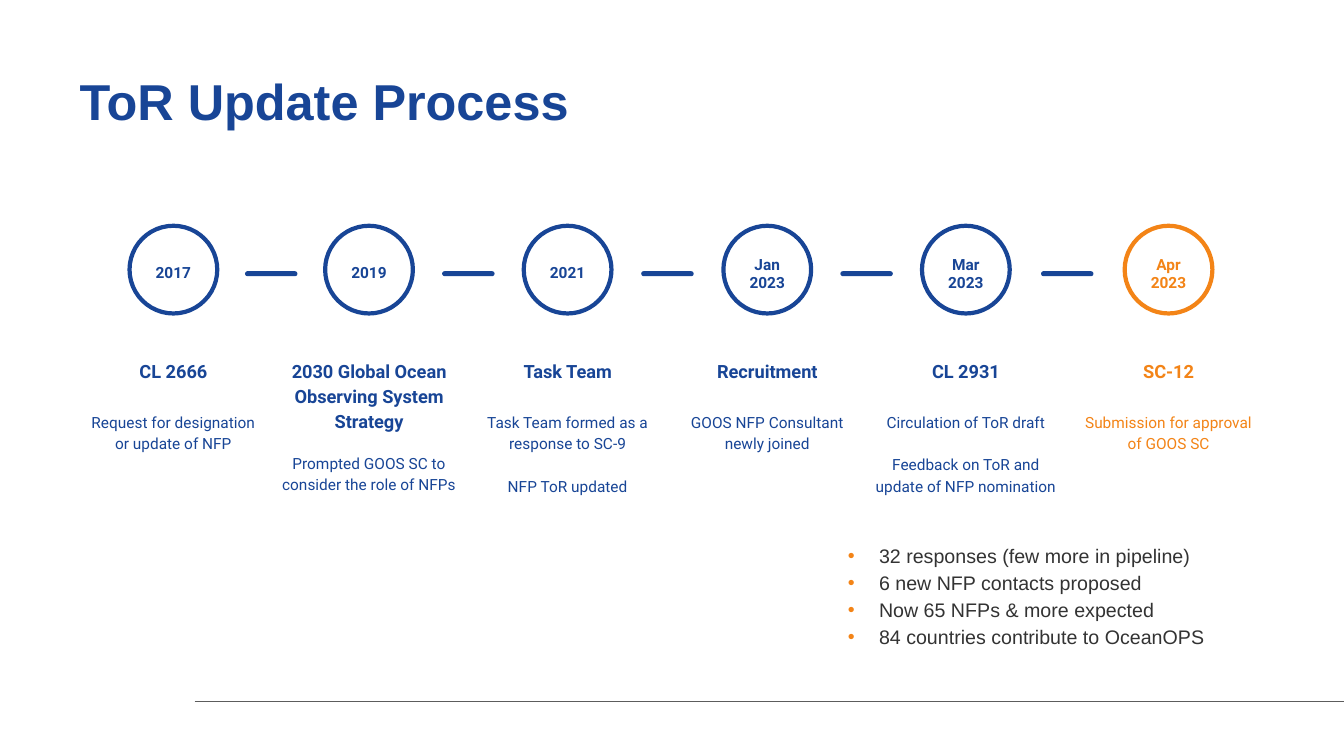
from dataclasses import dataclass

from lxml import etree
from pptx import Presentation
from pptx import util as u
from pptx.dml.color import RGBColor
from pptx.enum import shapes, text
from pptx.oxml import ns

WIDTH, HEIGHT = 13.33, 7.5
BLUE, ORANGE, GREY, RULE = "184596", "F38417", "333333", "5C5C5C"

# Timeline rows
CIRCLE_TOP, CIRCLE_SIZE = 2.24, 0.87
BAR_TOP, BAR_WIDTH, BAR_HEIGHT = 2.69, 0.52, 0.05
HEADING_TOP, HEADING_HEIGHT = 3.27, 0.65
DETAIL_TOP, DETAIL_HEIGHT = 3.94, 1.08
BLANK_LINE = 15.2


@dataclass
class Milestone:
    centre: float
    date: list
    heading: str
    details: list
    heading_width: float = 1.91
    detail_width: float = 1.91
    heading_drop: float = 0
    detail_drop: float = 0
    color: str = BLUE


MILESTONES = [
    Milestone(1.72, ["2017"], "CL 2666",
              ["Request for designation or update of NFP"]),
    Milestone(3.66, ["2019"], "2030 Global Ocean Observing System Strategy",
              ["Prompted GOOS SC to consider the role of NFPs"],
              detail_width=2.12, heading_drop=0.5, detail_drop=0.41),
    Milestone(5.63, ["2021"], "Task Team",
              ["Task Team formed as a response to SC-9", "NFP ToR updated"],
              1.98, 1.98),
    Milestone(7.61, ["Jan", "2023"], "Recruitment",
              ["GOOS NFP Consultant newly joined"]),
    Milestone(9.58, ["Mar", "2023"], "CL 2931",
              ["Circulation of ToR draft",
               "Feedback on ToR and update of NFP nomination"], 1.98, 2.18),
    Milestone(11.59, ["Apr", "2023"], "SC-12",
              ["Submission for approval of GOOS SC"], 1.98, 1.98, color=ORANGE),
]

RESULTS = [
    "32 responses (few more in pipeline)",
    "6 new NFP contacts proposed",
    "Now 65 NFPs & more expected",
    "84 countries contribute to OceanOPS",
]


def rgb(color):
    return RGBColor.from_string(color)


def add_span(para, words, size, color, font="Roboto", bold=False):
    span = para.add_run()
    span.text = words
    span.font.name = font
    span.font.size = u.Pt(size)
    span.font.bold = bold
    span.font.color.rgb = rgb(color)


def set_frame(frame, inset_x, inset_y, anchor=text.MSO_ANCHOR.TOP):
    frame.word_wrap = True
    frame.vertical_anchor = anchor
    frame.margin_left = frame.margin_right = u.Inches(inset_x)
    frame.margin_top = frame.margin_bottom = u.Inches(inset_y)


def next_para(frame, index):
    return frame.add_paragraph() if index else frame.paragraphs[0]


def add_box(page, left, top, width, height):
    return page.shapes.add_textbox(*map(u.Inches, (left, top, width, height)))


def add_centred_text(page, centre, top, width, height, lines, size, color,
                     bold=False, spacing=1.15, gap=0, anchor=text.MSO_ANCHOR.TOP):
    box = add_box(page, centre - width / 2, top, width, height)
    set_frame(box.text_frame, 0.13, 0.13, anchor)
    for index, line in enumerate(lines):
        para = next_para(box.text_frame, index)
        para.alignment = text.PP_ALIGN.CENTER
        para.line_spacing = spacing
        if index and gap:
            para.space_before = u.Pt(gap)
        add_span(para, line, size, color, bold=bold)


def add_plain_shape(page, kind, left, top, width, height):
    shape = page.shapes.add_shape(kind, *map(u.Inches, (left, top, width, height)))
    shape.shadow.inherit = False
    return shape


def add_circle(page, centre, color):
    circle = add_plain_shape(page, shapes.MSO_SHAPE.OVAL, centre - CIRCLE_SIZE / 2,
                             CIRCLE_TOP, CIRCLE_SIZE, CIRCLE_SIZE)
    circle.fill.background()
    circle.line.color.rgb = rgb(color)
    circle.line.width = u.Pt(3)


def add_bar(page, centre):
    bar = add_plain_shape(page, shapes.MSO_SHAPE.ROUNDED_RECTANGLE,
                          centre - BAR_WIDTH / 2, BAR_TOP, BAR_WIDTH, BAR_HEIGHT)
    bar.adjustments[0] = 0.5
    bar.fill.solid()
    bar.fill.fore_color.rgb = rgb(BLUE)
    bar.line.fill.background()


def add_milestone(page, stone):
    add_circle(page, stone.centre, stone.color)
    single = len(stone.date) == 1
    add_centred_text(page, stone.centre, 2.48 if single else 2.4, 0.64, 0.47,
                     stone.date, 11, stone.color, bold=True,
                     spacing=1.15 if single else 1.0)
    add_centred_text(page, stone.centre, HEADING_TOP + stone.heading_drop,
                     stone.heading_width, HEADING_HEIGHT, [stone.heading], 13,
                     stone.color, bold=True, anchor=text.MSO_ANCHOR.BOTTOM)
    add_centred_text(page, stone.centre, DETAIL_TOP + stone.detail_drop,
                     stone.detail_width, DETAIL_HEIGHT, stone.details, 11,
                     stone.color, gap=BLANK_LINE)


def set_bullet(para, color):
    props = para._p.get_or_add_pPr()
    props.set("marL", str(u.Inches(1.08)))
    props.set("indent", str(u.Inches(-0.31)))
    bullet_color = etree.SubElement(props, ns.qn("a:buClr"))
    etree.SubElement(bullet_color, ns.qn("a:srgbClr"), val=color)
    etree.SubElement(props, ns.qn("a:buFont"), typeface="Arial")
    etree.SubElement(props, ns.qn("a:buChar"), char="•")


def add_results(page):
    box = add_box(page, 7.54, 5.31, 4.86, 1.15)
    set_frame(box.text_frame, 0.1, 0.05)
    for index, line in enumerate(RESULTS):
        para = next_para(box.text_frame, index)
        set_bullet(para, ORANGE)
        para.line_spacing = 1.15
        add_span(para, line, 14, GREY, font="Arial")


def add_title(page, words):
    title = page.shapes.title
    title.left, title.top = u.Inches(0.79), u.Inches(0.79)
    title.width, title.height = u.Inches(11.76), u.Inches(0.63)
    set_frame(title.text_frame, 0, 0)
    para = title.text_frame.paragraphs[0]
    para.alignment = text.PP_ALIGN.LEFT
    para.line_spacing = 0.85
    add_span(para, words, 36, BLUE, font="Arial", bold=True)


def add_footer_rule(page):
    rule = page.shapes.add_connector(
        shapes.MSO_CONNECTOR.STRAIGHT,
        *map(u.Inches, (1.93, 6.96, WIDTH, 6.96)))
    rule.line.color.rgb = rgb(RULE)
    rule.line.width = u.Pt(0.75)
    etree.SubElement(rule._element.spPr, ns.qn("a:effectLst"))


def main():
    deck = Presentation()
    deck.slide_width, deck.slide_height = u.Inches(WIDTH), u.Inches(HEIGHT)
    page = deck.slides.add_slide(deck.slide_layouts[5])

    # Frame of the slide
    add_footer_rule(page)
    add_title(page, "ToR Update Process")

    # Timeline, with a bar halfway between neighbouring milestones
    for stone in MILESTONES:
        add_milestone(page, stone)
    for before, after in zip(MILESTONES, MILESTONES[1:]):
        add_bar(page, (before.centre + after.centre) / 2)

    # Outcome of the circulation
    add_results(page)
    deck.save("out.pptx")


if __name__ == "__main__":
    main()
